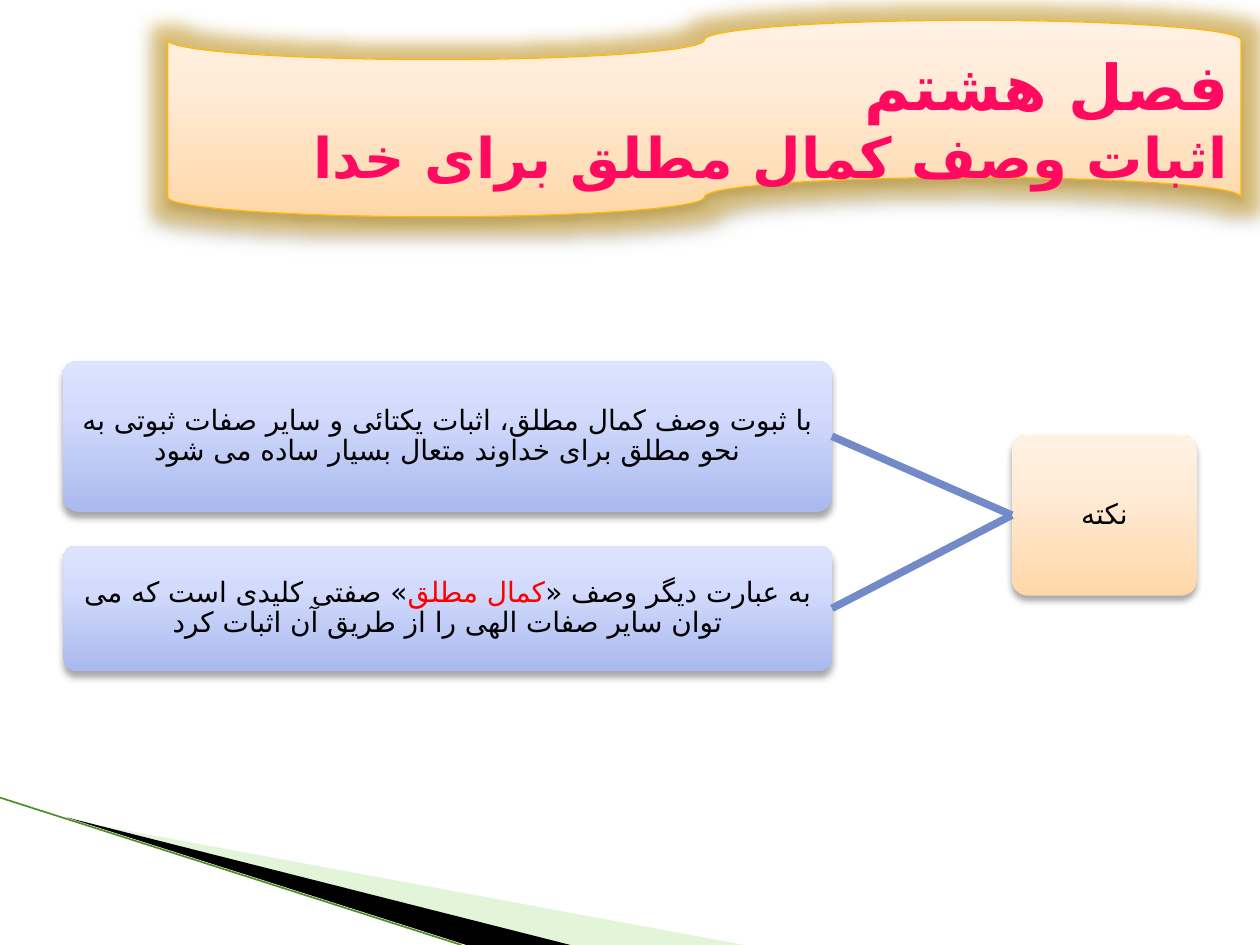
from pptx import Presentation
from pptx.dml.color import RGBColor
from pptx.enum.shapes import MSO_CONNECTOR, MSO_SHAPE
from pptx.enum.text import MSO_ANCHOR, MSO_AUTO_SIZE, PP_ALIGN
from pptx.oxml import parse_xml
from pptx.oxml.ns import nsdecls, qn
from pptx.util import Cm, Pt

STRAIGHT = MSO_CONNECTOR.STRAIGHT
ROUNDED, WAVING = MSO_SHAPE.ROUNDED_RECTANGLE, MSO_SHAPE.FLOWCHART_PUNCHED_TAPE
MIDDLE = MSO_ANCHOR.MIDDLE
NO_AUTOFIT = MSO_AUTO_SIZE.NONE
CENTER, RIGHT = PP_ALIGN.CENTER, PP_ALIGN.RIGHT
LEFT_SIDE, RIGHT_SIDE = 1, 3

FONT, ARABIC_FONT = "Courier New", "DejaVu Sans"
PEACH = [(0, "FFD7A7"), (65, "FFEBD7"), (100, "FFF1E3")]
BLUE = [(0, "AAB9EE"), (65, "D2DBFC"), (100, "DDE4FF")]
BLACK, RED, PINK = "000000", "FF0000", "FF0A5E"

TITLE_BOX = (3.38, 0.41, 21.64, 3.96)
TITLE_LINES = [("فصل هشتم", 36), ("اثبات وصف کمال مطلق برای خدا", 32)]

NOTE = ((20.4, 8.76, 3.73, 3.25), [("نکته", BLACK)])
POINTS = [
    ((1.27, 7.27, 15.5, 3.05), [
        ("با ثبوت وصف کمال مطلق، اثبات یکتائی و سایر صفات ثبوتی به نحو "
         "مطلق برای خداوند متعال بسیار ساده می شود", BLACK)]),
    ((1.28, 11, 15.49, 2.53), [
        ("به عبارت دیگر وصف «", BLACK),
        ("کمال مطلق", RED),
        ("» صفتی کلیدی است که می توان سایر صفات الهی را از طریق آن اثبات کرد", BLACK)]),
]

WEDGES = [
    ([(1.4, 16.53), (15.11, 19.07), (11.58, 19.07)], "B8E7A1", 40),
    ([(1.35, 16.48), (11.5, 19.05), (9.4, 19.05)], BLACK, 100),
]
EDGE = ((0, 16.08), (9.3, 19.05))


def rgb(value):
    """Return the colour for a hex string."""
    return RGBColor.from_string(value)


def lengths(values):
    """Return centimetre values as slide lengths."""
    return [Cm(value) for value in values]


def fill_gradient(shape, stops):
    """Fill a shape with a gradient that runs from bottom to top."""
    shape.fill.background()
    marks = "".join(f'<a:gs pos="{place * 1000}"><a:srgbClr val="{value}"/></a:gs>'
                    for place, value in stops)
    gradient = parse_xml(f'<a:gradFill {nsdecls("a")} rotWithShape="1"><a:gsLst>{marks}'
                         '</a:gsLst><a:lin ang="16200000" scaled="0"/></a:gradFill>')
    blank = shape._element.spPr.find(qn("a:noFill"))
    blank.getparent().replace(blank, gradient)


def add_effects(shape, glow=""):
    """Give a shape a soft shadow below it, after an optional glow."""
    shape.shadow.inherit = False
    old = shape._element.spPr.find(qn("a:effectLst"))
    old.getparent().replace(old, parse_xml(
        f'<a:effectLst {nsdecls("a")}>{glow}<a:outerShdw blurRad="50800" dist="38100" '
        'dir="5400000" rotWithShape="0"><a:srgbClr val="000000"><a:alpha val="35000"/>'
        '</a:srgbClr></a:outerShdw></a:effectLst>'))


def set_rtl(paragraph, alignment):
    """Make a paragraph run from right to left."""
    paragraph.alignment = alignment
    paragraph._p.get_or_add_pPr().set("rtl", "1")


def add_run(paragraph, text, size, color, bold=False):
    """Add a run with its Latin and Arabic fonts."""
    run = paragraph.add_run()
    run.text = text
    run.font.size, run.font.bold, run.font.name = Pt(size), bold, FONT
    run.font.color.rgb = rgb(color)
    run._r.get_or_add_rPr().append(
        parse_xml(f'<a:cs {nsdecls("a")} typeface="{ARABIC_FONT}"/>'))


def add_banner(slide):
    """Add the waving banner with its glow."""
    banner = slide.shapes.add_shape(WAVING, *lengths(TITLE_BOX))
    fill_gradient(banner, PEACH)
    banner.line.color.rgb = rgb("FEB80A")
    banner.line.width = Pt(0.75)
    add_effects(banner, '<a:glow rad="228600"><a:srgbClr val="D9A520">'
                        '<a:alpha val="50000"/></a:srgbClr></a:glow>')


def add_title(slide):
    """Set the title over the banner."""
    title = slide.shapes.title
    title.left, title.top, title.width, title.height = lengths(TITLE_BOX)
    tree = title._element.getparent()
    tree.append(title._element)
    frame = title.text_frame
    frame.auto_size, frame.word_wrap, frame.vertical_anchor = NO_AUTOFIT, True, MIDDLE
    paragraph = frame.paragraphs[0]
    set_rtl(paragraph, RIGHT)
    for index, (text, size) in enumerate(TITLE_LINES):
        if index:
            paragraph.add_line_break()
        add_run(paragraph, text, size, PINK, bold=True)


def add_card(slide, box, runs, stops):
    """Add a rounded card with centred text."""
    card = slide.shapes.add_shape(ROUNDED, *lengths(box))
    card.adjustments[0] = 0.1
    fill_gradient(card, stops)
    card.line.fill.background()
    add_effects(card)
    frame = card.text_frame
    frame.word_wrap, frame.vertical_anchor = True, MIDDLE
    frame.margin_left = frame.margin_right = Cm(0.03)
    frame.margin_top = frame.margin_bottom = Cm(0.03)
    paragraph = frame.paragraphs[0]
    set_rtl(paragraph, CENTER)
    paragraph.line_spacing = 0.9
    for text, color in runs:
        add_run(paragraph, text, 16, color)
    return card


def add_line(slide, start, end, color, width):
    """Add a straight line without a shadow."""
    line = slide.shapes.add_connector(STRAIGHT, *lengths(start + end))
    line.line.color.rgb = rgb(color)
    line.line.width = Pt(width)
    line._element.spPr.append(parse_xml(f'<a:effectLst {nsdecls("a")}/>'))
    return line


def add_wedge(slide, corners, color, opacity):
    """Add a flat wedge in the lower corner."""
    first, *others = [tuple(lengths(corner)) for corner in corners]
    builder = slide.shapes.build_freeform(*first)
    builder.add_line_segments(others, close=True)
    wedge = builder.convert_to_shape()
    wedge.fill.solid()
    wedge.fill.fore_color.rgb = rgb(color)
    wedge.line.fill.background()
    wedge.shadow.inherit = False
    if opacity < 100:
        tint = wedge._element.spPr.find(qn("a:solidFill"))[0]
        tint.append(parse_xml(f'<a:alpha {nsdecls("a")} val="{opacity * 1000}"/>'))


def main():
    """Build the slide and save it."""
    deck = Presentation()
    deck.slide_width, deck.slide_height = Cm(25.4), Cm(19.05)
    slide = deck.slides.add_slide(deck.slide_layouts[5])
    for wedge in WEDGES:
        add_wedge(slide, *wedge)
    add_line(slide, *EDGE, "4E8F1F", 0.95)
    add_banner(slide)
    add_title(slide)
    note = add_card(slide, *NOTE, PEACH)
    for box, runs in POINTS:
        point = add_card(slide, box, runs, BLUE)
        link = add_line(slide, (0, 0), (1, 1), "738AC8", 4.33)
        link.begin_connect(note, LEFT_SIDE)
        link.end_connect(point, RIGHT_SIDE)
    deck.save("out.pptx")


if __name__ == "__main__":
    main()
